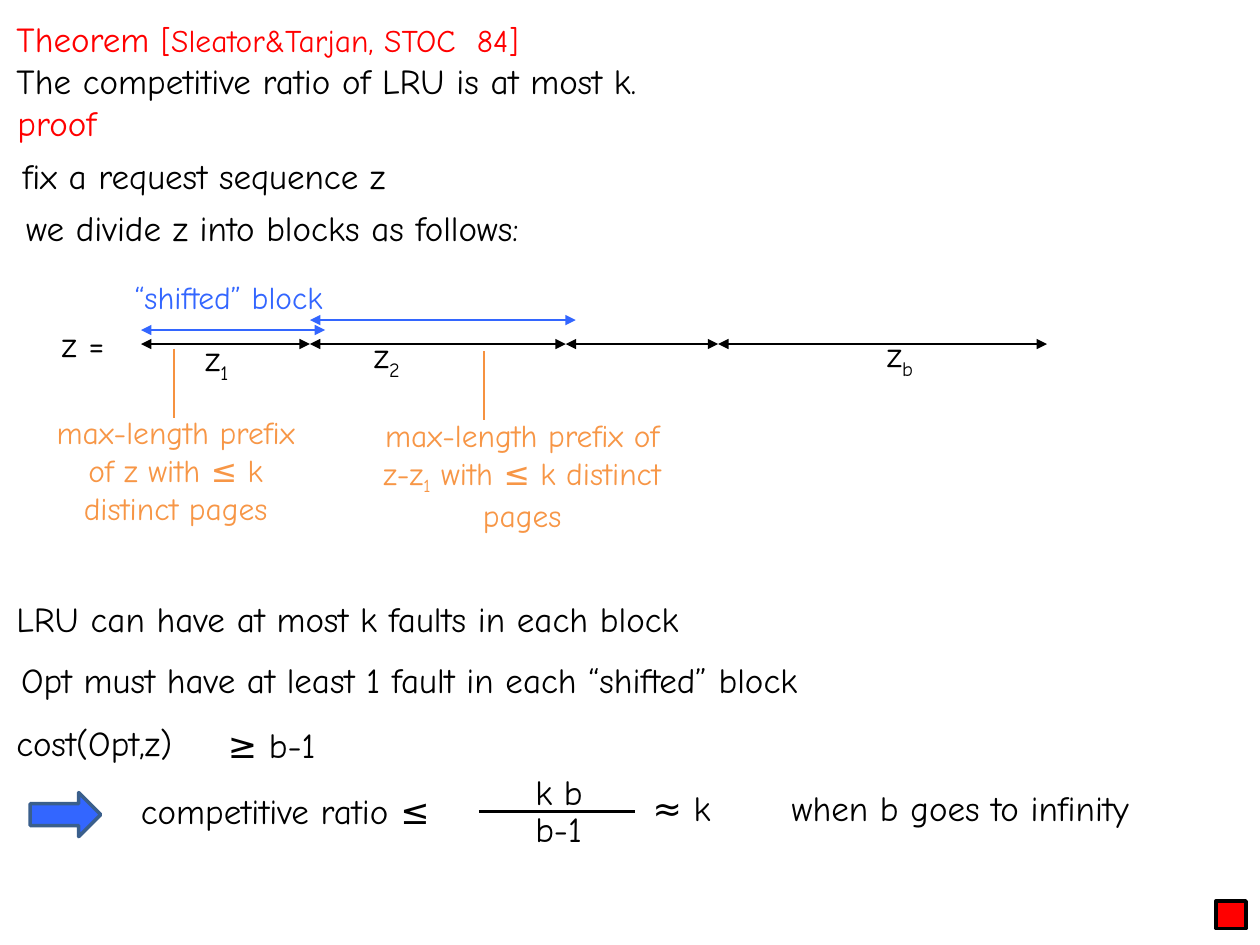
from collections import namedtuple

from lxml import etree
from pptx import Presentation
from pptx.dml.color import RGBColor
from pptx.enum.shapes import MSO_CONNECTOR as CONN, MSO_SHAPE as SHAPE
from pptx.enum.text import MSO_ANCHOR as ANCHOR, MSO_AUTO_SIZE as AUTO, PP_ALIGN as AL
from pptx.oxml.ns import qn
from pptx.util import Pt

Theme = namedtuple("Theme", "font body small black red blue orange stem arrow_edge")
T = Theme("Comic Neue", 20, 18, *map(RGBColor.from_string, (
    "000000", "FF0000", "3366FF", "F79646", "F69240", "3A5F8C")))

prs = Presentation()
prs.slide_width, prs.slide_height = Pt(720), Pt(540)
s = prs.slides.add_slide(prs.slide_layouts.get_by_name("Title Only"))


def add_text(x, y, w, h, text, color=T.black, size=T.body, align=AL.LEFT, tab=None):
    """Add a one-paragraph box; every second part between underscores is a subscript."""
    tf = s.shapes.add_textbox(Pt(x), Pt(y), Pt(w), Pt(h)).text_frame
    tf.word_wrap = True
    tf.auto_size = AUTO.SHAPE_TO_FIT_TEXT
    p = tf.paragraphs[0]
    p.alignment = align
    if tab:
        tabs = etree.SubElement(p._p.get_or_add_pPr(), qn("a:tabLst"))
        etree.SubElement(tabs, qn("a:tab"), pos=str(Pt(tab)), algn="l")
    p.font.name, p.font.size, p.font.color.rgb = T.font, Pt(size), color
    for i, part in enumerate(text.split("_")):
        r = p.add_run()
        r.text = part
        if i % 2:
            r._r.get_or_add_rPr().set("baseline", "-25000")


def add_line(x1, y1, x2, y2, color, width, arrows=False):
    sp = s.shapes.add_connector(CONN.STRAIGHT, Pt(x1), Pt(y1), Pt(x2), Pt(y2))
    sp.line.color.rgb, sp.line.width = color, Pt(width)
    if arrows:
        for end in ("a:headEnd", "a:tailEnd"):
            etree.SubElement(sp.line._get_or_add_ln(), qn(end), type="triangle")
    etree.SubElement(sp._element.spPr, qn("a:effectLst"))


# Theorem
title = s.shapes.title
title.left, title.top, title.width, title.height = Pt(2.2), Pt(6.5), Pt(715), Pt(55.4)
tf = title.text_frame
tf.word_wrap, tf.auto_size, tf.vertical_anchor = True, AUTO.SHAPE_TO_FIT_TEXT, ANCHOR.TOP
theorem = (
    (("Theorem ", T.body, T.red), ("[Sleator&Tarjan, STOC  84]", T.small, T.red)),
    (("The competitive ratio of LRU is at most k.", T.body, T.black),),
)
for i, runs in enumerate(theorem):
    p = tf.add_paragraph() if i else tf.paragraphs[0]
    p.alignment = AL.LEFT
    for text, size, color in runs:
        r = p.add_run()
        r.text = text
        r.font.name, r.font.size, r.font.color.rgb = T.font, Pt(size), color

# Proof steps
add_text(2.9, 54.7, 715, 31.5, "proof", T.red)
for x, y, text in (
    (5.8, 85, "fix a request sequence z"),
    (7.9, 114.5, "we divide z into blocks as follows:"),
    (2.2, 337.7, "LRU can have at most k faults in each block"),
    (5, 373, "Opt must have at least 1 fault in each “shifted” block"),
):
    add_text(x, y, 646, 31.5, text)

# Sequence split into blocks
edges = (80.6, 177.1, 323.3, 410.4, 598.3)
axis_y = 196.6
add_text(28.1, 180.7, 42.5, 31.5, "z =")
for x1, x2 in zip(edges, edges[1:]):
    add_line(x1, axis_y, x2, axis_y, T.black, 1.5, arrows=True)
for x, y, index in ((110.2, 188.6, "1"), (206.6, 187.2, "2"), (499.7, 186.5, "b")):
    add_text(x, y, 45.4, 31.5, f"z_{index}_")

# Shifted blocks
add_text(47.5, 155.5, 166.3, 29, "“shifted” block", T.blue, T.small, AL.CENTER)
for x1, x2, y in ((edges[0], 185.8, 188.6), (edges[1], 329, 182.9)):
    add_line(x1, y, x2, y, T.blue, 1.5, arrows=True)

# Block definitions
for x, y, w, stem_x, text in (
    (15.1, 232.6, 170.6, 99.4, "max-length prefix of z with ≤ k distinct pages"),
    (209.5, 234, 177.8, 276.5, "max-length prefix of z-z_1_ with ≤ k distinct pages"),
):
    add_text(x, y, w, 72.7, text, T.orange, T.small, AL.CENTER)
    add_line(stem_x, y - 33.4, stem_x, y + 6, T.stem, 1.25)

# Cost bound and competitive ratio
add_text(2.2, 409, 144.7, 31.5, "cost(Opt,z)")
add_text(123.1, 409.7, 90.7, 31.5, "≥ b-1")
add_text(73.4, 447.8, 197.3, 31.5, "competitive ratio ≤")
add_text(298.8, 437, 51, 31.5, "k b")
add_text(298.8, 457.9, 88.6, 31.5, "b-1")
add_line(273.6, 463.7, 362.9, 463.7, T.black, 1.25)
add_text(365.8, 445.7, 313, 31.5, "≈ k\twhen b goes to infinity", tab=79.5)

# Implication arrow and end-of-proof mark
for kind, x, y, w, h, fill, edge in (
    (SHAPE.RIGHT_ARROW, 17.3, 452.9, 40.3, 25.2, T.blue, T.arrow_edge),
    (SHAPE.RECTANGLE, 694.8, 514.8, 17.3, 15.8, T.red, T.black),
):
    sp = s.shapes.add_shape(kind, Pt(x), Pt(y), Pt(w), Pt(h))
    sp.shadow.inherit = False
    sp.fill.solid()
    sp.fill.fore_color.rgb = fill
    sp.line.color.rgb, sp.line.width = edge, Pt(2)

prs.save("out.pptx")
